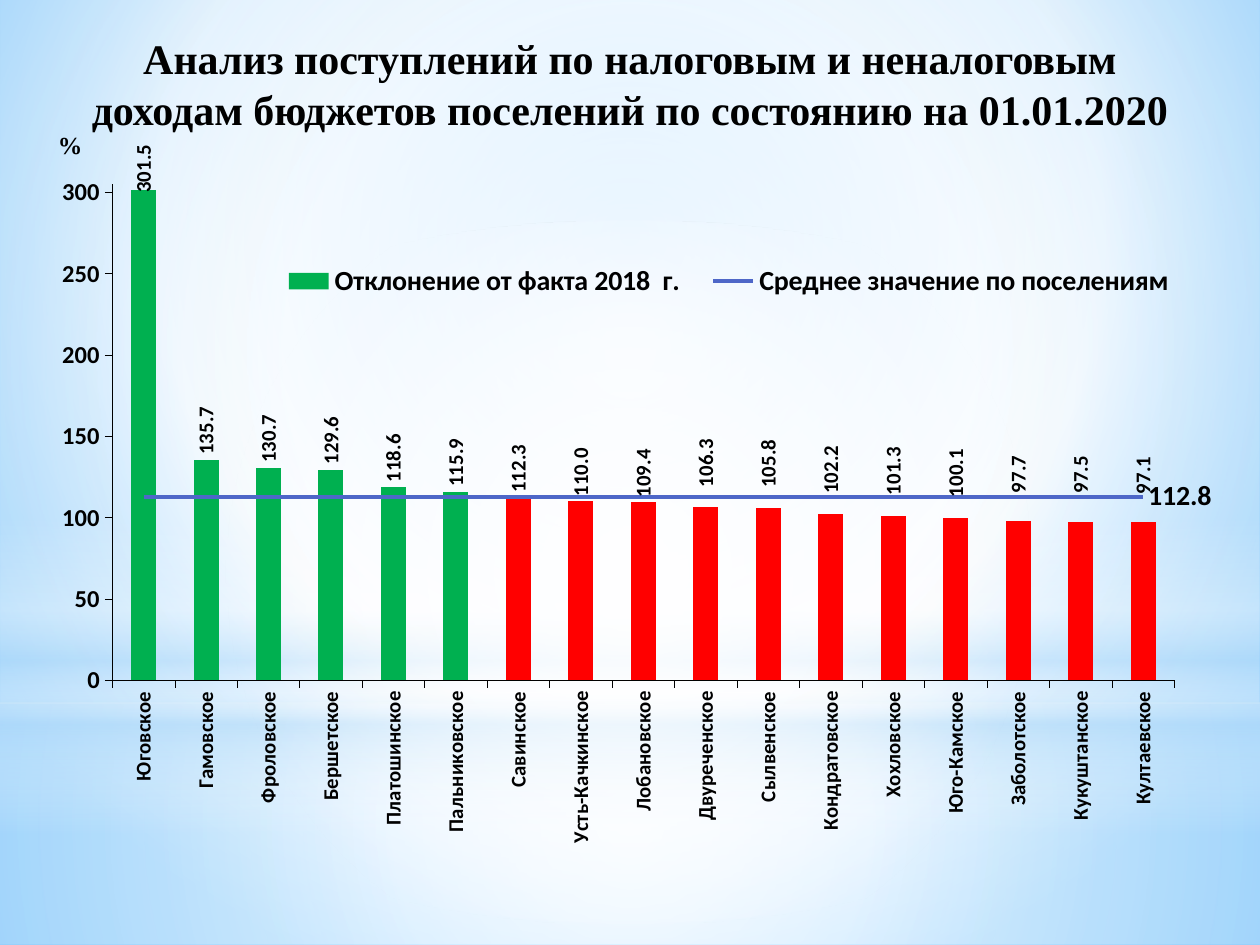
import copy
import lxml.etree
import pptx
import pptx.chart.data
import pptx.dml.color
import pptx.enum.chart
import pptx.enum.shapes
import pptx.enum.text
import pptx.oxml
import pptx.oxml.ns
import pptx.util

Inches = pptx.util.Inches
Pt = pptx.util.Pt
RGBColor = pptx.dml.color.RGBColor
qn = pptx.oxml.ns.qn
nsdecls = pptx.oxml.ns.nsdecls

COLORS = {
    "white": "FFFFFF",
    "pale": "B4DCFA",
    "sky": "9ED5FF",
    "azure": "5BB9FF",
    "black": "000000",
    "above": "00B050",
    "below": "FF0000",
    "average": "4E67C8",
}
AVERAGE = 112.8
GROWTH = {
    "Юговское": 301.5, "Гамовское": 135.7, "Фроловское": 130.7,
    "Бершетское": 129.6, "Платошинское": 118.6, "Пальниковское": 115.9,
    "Савинское": 112.3, "Усть-Качкинское": 110, "Лобановское": 109.4,
    "Двуреченское": 106.3, "Сылвенское": 105.8, "Кондратовское": 102.2,
    "Хохловское": 101.3, "Юго-Камское": 100.1, "Заболотское": 97.7,
    "Кукуштанское": 97.5, "Култаевское": 97.1,
}
LABEL_SHIFTS = {0: 0.01, 9: -0.02, 10: -0.02, 11: -0.02, 12: -0.02,
                13: -0.02, 14: -0.03, 15: -0.03, 16: -0.03}


def gradient(stops, focus=None):
    stop_xml = "".join(
        f'<a:gs pos="{position * 1000}"><a:srgbClr val="{COLORS[color]}">'
        f'<a:alpha val="{alpha * 1000}"/></a:srgbClr></a:gs>'
        for position, color, alpha in stops)
    if focus:
        left, top, right, bottom = [side * 1000 for side in focus]
        direction = (f'<a:path path="circle"><a:fillToRect l="{left}" t="{top}" '
                     f'r="{right}" b="{bottom}"/></a:path>')
    else:
        direction = '<a:lin ang="5400000" scaled="0"/>'
    return pptx.oxml.parse_xml(
        f'<a:gradFill {nsdecls("a")} rotWithShape="1"><a:gsLst>{stop_xml}</a:gsLst>'
        f'{direction}</a:gradFill>')


def style_font(font, size, name="Calibri"):
    font.size = Pt(size)
    font.name = name
    font.bold = True
    font.color.rgb = RGBColor.from_string(COLORS["black"])


presentation = pptx.Presentation()
presentation.slide_width = Inches(10)
presentation.slide_height = Inches(7.5)
slide = presentation.slides.add_slide(presentation.slide_layouts[5])
title = slide.shapes.title

slide.background.fill.solid()
background_fill = slide.element.find(".//" + qn("a:solidFill"))
background_fill.getparent().replace(background_fill, gradient(
    [(0, "sky", 100), (60, "white", 100), (100, "azure", 100)], (20, 10, 20, 60)))

center = (50, 50, 50, 50)
rectangle = pptx.enum.shapes.MSO_SHAPE.RECTANGLE
oval = pptx.enum.shapes.MSO_SHAPE.OVAL
glows = [
    (rectangle, 5.58, 1.92, center,
     [(0, "white", 91), (37, "white", 76), (100, "pale", 79)]),
    (rectangle, 0, 5.58, center,
     [(0, "white", 89), (48, "white", 62), (100, "pale", 79)]),
    (rectangle, 4.12, 2.5, None,
     [(0, "white", 0), (29, "white", 30), (45, "pale", 40),
      (55, "white", 26), (65, "pale", 60), (100, "white", 0)]),
    (oval, 1.75, 5.58, center, [(0, "white", 100), (56, "white", 0)]),
]
for kind, top, height, focus, stops in glows:
    glow = slide.shapes.add_shape(kind, 0, Inches(top), Inches(10), Inches(height))
    glow.shadow.inherit = False
    glow.line.fill.background()
    glow.fill.solid()
    solid = glow.element.spPr.find(qn("a:solidFill"))
    glow.element.spPr.replace(solid, gradient(stops, focus))
    title.element.addprevious(glow.element)

title.left, title.top, title.width, title.height = [
    Inches(length) for length in (0.5, 0.21, 9, 0.54)]
title.text_frame.text = ("Анализ поступлений по налоговым и неналоговым доходам "
                         "бюджетов поселений по состоянию на 01.01.2020")
title.text_frame.word_wrap = True
title.text_frame.auto_size = pptx.enum.text.MSO_AUTO_SIZE.NONE
title.text_frame.vertical_anchor = pptx.enum.text.MSO_ANCHOR.TOP
title_paragraph = title.text_frame.paragraphs[0]
title_paragraph.alignment = pptx.enum.text.PP_ALIGN.CENTER
style_font(title_paragraph.runs[0].font, 24, "Times New Roman")

chart_data = pptx.chart.data.CategoryChartData(number_format="#,##0.0")
chart_data.categories = list(GROWTH)
chart_data.add_series("Отклонение от факта 2018  г. ", list(GROWTH.values()))
chart_data.add_series("Среднее значение по поселениям", [AVERAGE] * len(GROWTH))
chart = slide.shapes.add_chart(
    pptx.enum.chart.XL_CHART_TYPE.COLUMN_CLUSTERED,
    Inches(0.31), Inches(1.15), Inches(9.69), Inches(6.22), chart_data).chart
style_font(chart.font, 18)
chart.has_title = False

bar_plot = chart.plots[0]
bar_plot.gap_width = 150
bar_plot.vary_by_categories = False
bar_chart = chart.element.find(".//" + qn("c:barChart"))
line_chart = pptx.oxml.parse_xml(
    f'<c:lineChart {nsdecls("c")}><c:grouping val="standard"/>'
    '<c:varyColors val="0"/><c:marker val="1"/></c:lineChart>')
average_element = bar_chart.findall(qn("c:ser"))[1]
for bar_setting in average_element.findall(qn("c:invertIfNegative")):
    average_element.remove(bar_setting)
line_chart.insert(2, average_element)
for axis_id in bar_chart.findall(qn("c:axId")):
    line_chart.append(copy.deepcopy(axis_id))
bar_chart.addnext(line_chart)

growth_series = bar_plot.series[0]
growth_series.format.fill.solid()
growth_series.format.fill.fore_color.rgb = RGBColor.from_string(COLORS["above"])
for index, value in enumerate(GROWTH.values()):
    if value < AVERAGE:
        fill = growth_series.points[index].format.fill
        fill.solid()
        fill.fore_color.rgb = RGBColor.from_string(COLORS["below"])

labels = growth_series.data_labels
labels.show_value = True
labels.number_format = "#,##0.0"
labels.number_format_is_linked = False
labels.position = pptx.enum.chart.XL_LABEL_POSITION.OUTSIDE_END
style_font(labels.font, 12)
labels_element = bar_chart.find(qn("c:ser")).find(qn("c:dLbls"))
labels_element.find(".//" + qn("a:bodyPr")).set("rot", "-5400000")
shared_settings = [child for child in labels_element
                   if child.tag != qn("c:showLeaderLines")]
for position, (index, shift) in enumerate(LABEL_SHIFTS.items()):
    label = pptx.oxml.parse_xml(
        f'<c:dLbl {nsdecls("c")}><c:idx val="{index}"/><c:layout><c:manualLayout>'
        f'<c:x val="0"/><c:y val="{shift}"/></c:manualLayout></c:layout></c:dLbl>')
    label.extend(copy.deepcopy(shared_settings))
    labels_element.insert(position, label)

average_series = chart.plots[1].series[0]
average_series.smooth = False
average_series.marker.style = pptx.enum.chart.XL_MARKER_STYLE.NONE
average_series.format.line.width = Pt(2.25)
average_series.format.line.color.rgb = RGBColor.from_string(COLORS["average"])
average_series.data_labels.show_value = False
average_label = average_series.points[len(GROWTH) - 1].data_label
style_font(average_label.font, 16)
average_label.position = pptx.enum.chart.XL_LABEL_POSITION.RIGHT

value_axis = chart.value_axis
value_axis.minimum_scale = 0
value_axis.maximum_scale = 305
value_axis.major_unit = 50
value_axis.has_major_gridlines = False
value_axis.tick_labels.number_format = "0"
value_axis.tick_labels.number_format_is_linked = False
for axis, size in ((chart.category_axis, 12), (value_axis, 14)):
    style_font(axis.tick_labels.font, size)
    axis.major_tick_mark = pptx.enum.chart.XL_TICK_MARK.OUTSIDE
    axis.format.line.width = Pt(0.25)
    axis.format.line.color.rgb = RGBColor.from_string(COLORS["black"])
chart.category_axis.tick_label_position = pptx.enum.chart.XL_TICK_LABEL_POSITION.LOW
category_text = chart.element.find(".//" + qn("c:catAx")).find(qn("c:txPr"))
category_text.find(qn("a:bodyPr")).set("rot", "-5400000")

chart.has_legend = True
chart.legend.position = pptx.enum.chart.XL_LEGEND_POSITION.BOTTOM
chart.legend.include_in_layout = False
style_font(chart.legend.font, 16)
plot_area = chart.element.find(".//" + qn("c:plotArea"))
legend = chart.element.find(".//" + qn("c:legend"))
for area, target, box in ((plot_area, '<c:layoutTarget val="inner"/>', (0.06, 0.04, 0.87, 0.64)),
                          (legend, "", (0.19, 0.14, 0.75, 0.05))):
    for old_layout in area.findall(qn("c:layout")):
        area.remove(old_layout)
    x, y, width, height = box
    layout = pptx.oxml.parse_xml(
        f'<c:layout {nsdecls("c")}><c:manualLayout>{target}<c:xMode val="edge"/>'
        f'<c:yMode val="edge"/><c:x val="{x}"/><c:y val="{y}"/>'
        f'<c:w val="{width}"/><c:h val="{height}"/></c:manualLayout></c:layout>')
    area.insert(0 if area is plot_area else 1, layout)

unit_box = slide.shapes.add_textbox(Inches(0.12), Inches(0.98), Inches(0.87), Inches(0.34))
unit_box.text_frame.word_wrap = True
unit_box.text_frame.margin_left = Inches(0.34)
unit_box.text_frame.text = "%"
style_font(unit_box.text_frame.paragraphs[0].runs[0].font, 14, "Times New Roman")

presentation.save("out.pptx")
